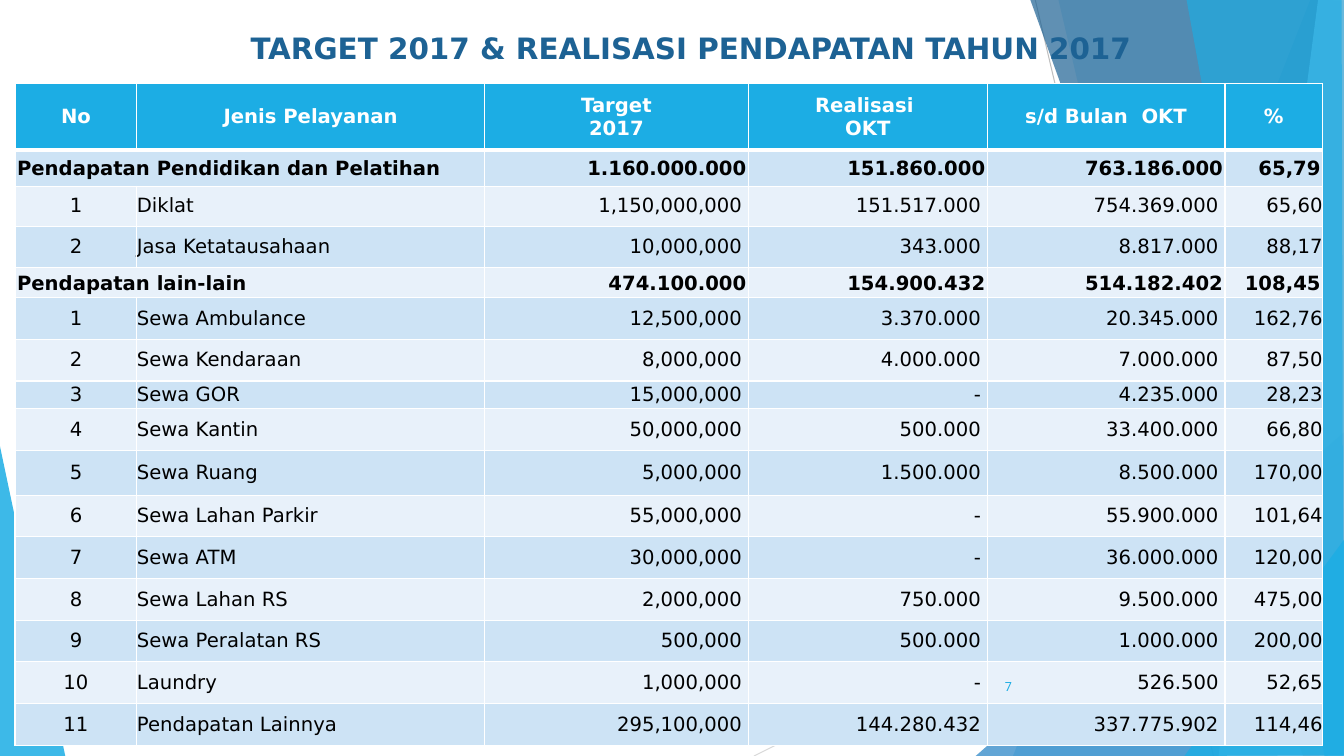
from pptx import Presentation
from pptx.dml.color import RGBColor
from pptx.enum import shapes, text
from pptx.oxml import ns, xmlchemy
from pptx.util import Cm, Pt

# Content
TITLE = "TARGET 2017 & REALISASI PENDAPATAN TAHUN 2017"
PAGE_NUMBER = "7"
HEADER = ("No", "Jenis Pelayanan", "Target\n2017", "Realisasi \nOKT", "s/d Bulan  OKT", "%")
SECTIONS = [
    (("Pendapatan Pendidikan dan Pelatihan", "1.160.000.000", "151.860.000", "763.186.000", "65,79"), [
        ("Diklat", "1,150,000,000", "151.517.000", "754.369.000", "65,60"),
        ("Jasa Ketatausahaan", "10,000,000", "343.000", "8.817.000", "88,17"),
    ]),
    (("Pendapatan lain-lain", "474.100.000", "154.900.432", "514.182.402", "108,45"), [
        ("Sewa Ambulance", "12,500,000", "3.370.000", "20.345.000", "162,76"),
        ("Sewa Kendaraan", "8,000,000", "4.000.000", "7.000.000", "87,50"),
        ("Sewa GOR", "15,000,000", "-", "4.235.000", "28,23"),
        ("Sewa Kantin", "50,000,000", "500.000", "33.400.000", "66,80"),
        ("Sewa Ruang", "5,000,000", "1.500.000", "8.500.000", "170,00"),
        ("Sewa Lahan Parkir", "55,000,000", "-", "55.900.000", "101,64"),
        ("Sewa ATM", "30,000,000", "-", "36.000.000", "120,00"),
        ("Sewa Lahan RS", "2,000,000", "750.000", "9.500.000", "475,00"),
        ("Sewa Peralatan RS", "500,000", "500.000", "1.000.000", "200,00"),
        ("Laundry", "1,000,000", "-", "526.500", "52,65"),
        ("Pendapatan Lainnya", "295,100,000", "144.280.432", "337.775.902", "114,46"),
    ]),
]

# Look; all lengths in centimetres
COLORS = {"sky": "1CADE4", "pale": "77CEEF", "blue": "2683C6", "navy": "1D6294",
          "band_dark": "CDE3F5", "band_light": "E8F1FA", "white": "FFFFFF", "black": "000000",
          "rule_light": "D9D9D9", "rule_dark": "BFBFBF"}
TABLE_FONT = "DejaVu Sans"
COLUMN_WIDTHS = (3.07, 8.76, 6.65, 6.02, 5.99, 2.46)
ROW_HEIGHT = 1.05
ODD_ROW_HEIGHTS = {0: 1.67, 1: 0.91, 2: 1.01, 3: 1.04, 4: 0.76, 7: 0.7, 9: 1.13}
CELL_MARGINS = {"header": (0.51, 0.18, 0.51, 0.18), "section": (0.05, 0.05, 0.05, 0), "item": (0, 0, 0, 0)}
AMOUNT_GAP = 0.16

LEFT_FACET = ("sky", 85, [(-0.02, 11.15), (1.65, 19.07), (-0.02, 19.05)])
RULES = [("rule_light", (19, 19.05), (33.88, 11.61)), ("rule_dark", (26.09, 0), (30.58, 19.05))]
RIGHT_FACETS = [
    ("sky", 30, [(33.02, 0), (25.53, 19.05), (33.9, 19.07), (33.88, 0.02)]),
    ("sky", 20, [(26.67, -0.02), (31.14, 19.05), (33.88, 19.05), (33.88, -0.02)]),
    ("blue", 72, [(24.59, 19.05), (33.86, 10.9), (33.88, 19.05)]),
    ("navy", 70, [(25.96, -0.02), (32.84, 19.05), (33.88, 19.02), (33.88, -0.02)]),
    ("pale", 70, [(33.22, -0.02), (30.71, 19.05), (33.88, 19.05), (33.88, -0.02)]),
    ("sky", 65, [(29.9, -0.02), (33.38, 19.05), (33.86, 19.05), (33.81, -0.02)]),
    ("sky", 80, [(29.85, 19.05), (33.88, 13.59), (33.88, 19.03)]),
]
ALIGN = text.PP_ALIGN


def rgb(name):
    return RGBColor.from_string(COLORS[name])


def write(text_frame, content, size=14, color="black", bold=False, align=ALIGN.LEFT, font=TABLE_FONT):
    text_frame.text = content
    for paragraph in text_frame.paragraphs:
        paragraph.alignment = align
        for run in paragraph.runs:
            run.font.name, run.font.size, run.font.bold = font, Pt(size), bold
            run.font.color.rgb = rgb(color)


def add_facet(slide, color, opacity, points):
    corners = [(Cm(x), Cm(y)) for x, y in points]
    builder = slide.shapes.build_freeform(*corners[0])
    builder.add_line_segments(corners[1:], close=True)
    shape = builder.convert_to_shape()
    shape.shadow.inherit = False
    shape.fill.solid()
    shape.fill.fore_color.rgb = rgb(color)
    shape.line.fill.background()
    fill_color = shape.element.spPr.find(".//" + ns.qn("a:srgbClr"))
    fill_color.append(xmlchemy.OxmlElement("a:alpha"))
    fill_color[0].set("val", str(opacity * 1000))


def add_rule(slide, color, start, end):
    rule = slide.shapes.add_connector(shapes.MSO_CONNECTOR.STRAIGHT, *(Cm(v) for v in start + end))
    rule.line.color.rgb = rgb(color)
    rule.line.width = Pt(0.75)
    rule.element.spPr.append(xmlchemy.OxmlElement("a:effectLst"))


def set_borders(cell, **widths):
    properties = cell._tc.get_or_add_tcPr()
    for index, side in enumerate("LRTB"):
        border = xmlchemy.OxmlElement(f"a:ln{side}")
        border.set("w", str(Pt(widths.get(side, 1))))
        fill = xmlchemy.OxmlElement("a:solidFill")
        color = xmlchemy.OxmlElement("a:srgbClr")
        color.set("val", COLORS["white"])
        fill.append(color)
        border.append(fill)
        properties.insert(index, border)


def table_rows():
    rows = [("header", HEADER)]
    for (name, *totals), items in SECTIONS:
        rows.append(("section", (name, "", *totals)))
        rows += [("item", (str(number), *item)) for number, item in enumerate(items, 1)]
    return rows


def fill_cell(cell, kind, row, column, content):
    left, top, right, bottom = CELL_MARGINS[kind]
    if kind == "item" and 2 <= column <= 4:
        right = AMOUNT_GAP
    cell.margin_left, cell.margin_top = Cm(left), Cm(top)
    cell.margin_right, cell.margin_bottom = Cm(right), Cm(bottom)
    cell.vertical_anchor = text.MSO_ANCHOR.MIDDLE
    cell.fill.solid()
    band = "band_dark" if row % 2 else "band_light"
    cell.fill.fore_color.rgb = rgb("sky" if kind == "header" else band)
    set_borders(cell, T=3 if row == 1 else 1, B=3 if row == 0 else 1)
    if kind == "header" or (kind == "item" and column == 0):
        align = ALIGN.CENTER
    else:
        align = ALIGN.RIGHT if column > 1 else ALIGN.LEFT
    if content:
        write(cell.text_frame, content, color="white" if kind == "header" else "black",
              bold=kind != "item", align=align)


def add_income_table(slide):
    rows = table_rows()
    heights = [ODD_ROW_HEIGHTS.get(row, ROW_HEIGHT) for row in range(len(rows))]
    table = slide.shapes.add_table(len(rows), len(HEADER), Cm(0.38), Cm(2.11),
                                   Cm(sum(COLUMN_WIDTHS)), Cm(sum(heights))).table
    table.horz_banding = False
    for column, width in zip(table.columns, COLUMN_WIDTHS):
        column.width = Cm(width)
    for row, (kind, values) in enumerate(rows):
        table.rows[row].height = Cm(heights[row])
        for column, content in enumerate(values):
            fill_cell(table.cell(row, column), kind, row, column, content)
        if kind == "section":
            table.cell(row, 0).merge(table.cell(row, 1))


def main():
    presentation = Presentation()
    presentation.slide_width, presentation.slide_height = Cm(33.87), Cm(19.05)
    slide = presentation.slides.add_slide(presentation.slide_layouts[5])

    # Backdrop
    add_facet(slide, *LEFT_FACET)
    for rule in RULES:
        add_rule(slide, *rule)
    for facet in RIGHT_FACETS:
        add_facet(slide, *facet)

    # Title, raised above the backdrop
    title = slide.shapes.title
    title.element.getparent().append(title.element)
    title.left, title.top, title.width, title.height = Cm(1.7), Cm(0.64), Cm(31.42), Cm(1.32)
    write(title.text_frame, TITLE, size=21, color="navy", bold=True, align=ALIGN.CENTER)
    title.text_frame.vertical_anchor = text.MSO_ANCHOR.TOP
    title.text_frame.auto_size = text.MSO_AUTO_SIZE.NONE

    add_income_table(slide)

    # Page number
    page_box = slide.shapes.add_textbox(Cm(23.85), Cm(16.79), Cm(1.9), Cm(1.02))
    page_box.text_frame.word_wrap = True
    page_box.text_frame.vertical_anchor = text.MSO_ANCHOR.MIDDLE
    write(page_box.text_frame, PAGE_NUMBER, size=9, color="sky", align=ALIGN.RIGHT, font="Roboto")

    presentation.save("out.pptx")


if __name__ == "__main__":
    main()
